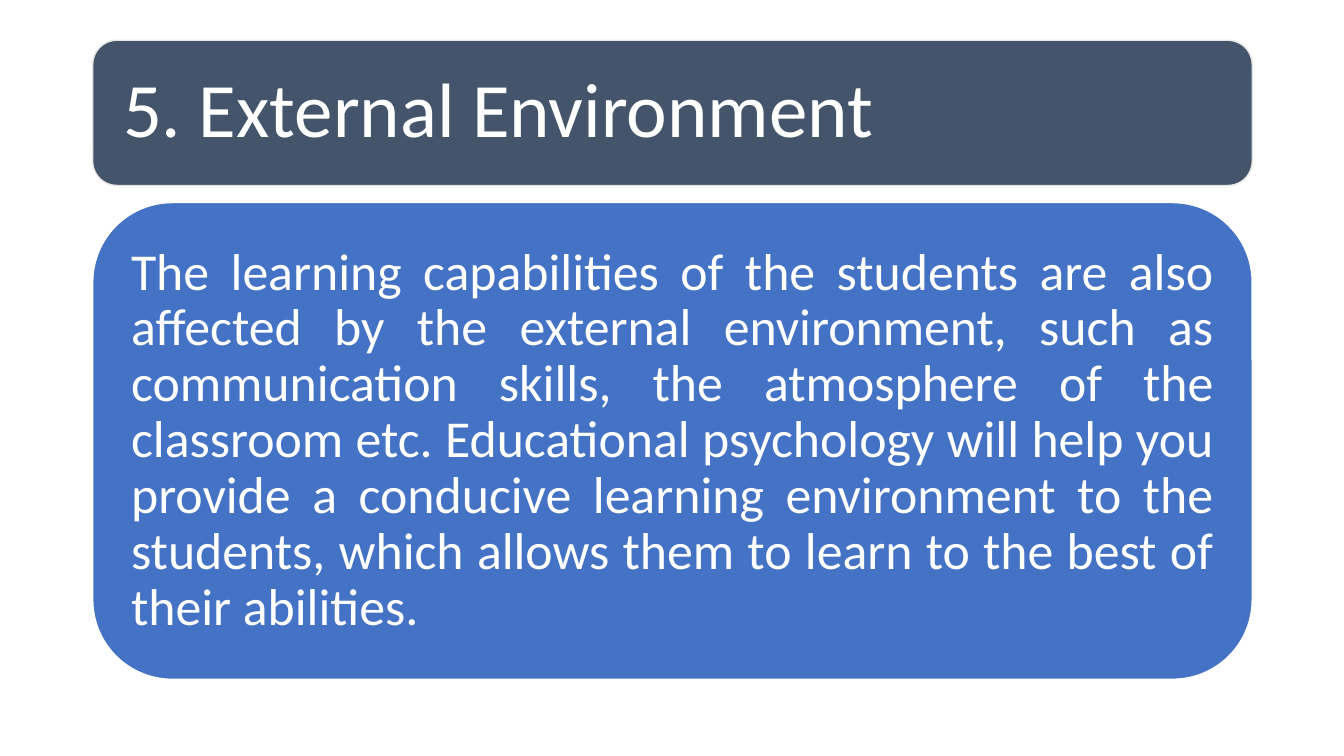
"""Build the External Environment slide with a title panel and a text panel."""
from dataclasses import dataclass

from lxml.etree import SubElement
from pptx import Presentation
from pptx.dml.color import RGBColor
from pptx.enum.shapes import MSO_SHAPE as Shape
from pptx.enum.text import MSO_ANCHOR as Anchor, MSO_AUTO_SIZE as AutoSize, PP_ALIGN as Align
from pptx.oxml.ns import qn
from pptx.shapes.placeholder import SlidePlaceholder
from pptx.slide import Slide
from pptx.util import Inches, Pt


@dataclass(frozen=True)
class Theme:
    font: str = "Calibri"
    text: str = "FFFFFF"
    title_fill: str = "44546A"
    title_line: str = "E7E6E6"
    body_fill: str = "4472C4"
    body_line: str = "FFFFFF"
    title_size: int = 55
    body_size: int = 37
    line_width: int = 1
    line_spacing: float = 0.9


@dataclass(frozen=True)
class Panel:
    placeholder_index: int
    top: float
    height: float
    padding: float
    inset: float
    fill: str
    line: str
    size: int
    align: Align
    text: str


THEME = Theme()
PANEL_LEFT, PANEL_WIDTH = 0.92, 11.5
PANELS = (
    Panel(0, 0.4, 1.44, 0.07, 0.23, THEME.title_fill, THEME.title_line,
          THEME.title_size, Align.LEFT, "5. External Environment"),
    Panel(1, 2.01, 4.73, 0.23, 0.15, THEME.body_fill, THEME.body_line,
          THEME.body_size, Align.JUSTIFY,
          "The learning capabilities of the students are also affected by the external "
          "environment, such as communication skills, the atmosphere of the classroom etc. "
          "Educational psychology will help you provide a conducive learning environment to "
          "the students, which allows them to learn to the best of their abilities."),
)


def format_text(placeholder: SlidePlaceholder, panel: Panel) -> None:
    """Place the placeholder inside its panel and format its text."""
    placeholder.left = Inches(PANEL_LEFT + panel.padding)
    placeholder.top = Inches(panel.top + panel.padding)
    placeholder.width = Inches(PANEL_WIDTH - 2 * panel.padding)
    placeholder.height = Inches(panel.height - 2 * panel.padding)
    frame = placeholder.text_frame
    frame.text = panel.text
    frame.word_wrap = True
    frame.auto_size = AutoSize.NONE
    frame.vertical_anchor = Anchor.MIDDLE
    frame.margin_left = frame.margin_right = Inches(panel.inset)
    frame.margin_top = frame.margin_bottom = Inches(panel.inset)
    paragraph = frame.paragraphs[0]
    paragraph.alignment = panel.align
    paragraph.line_spacing = THEME.line_spacing
    paragraph.space_before = Pt(0)
    paragraph.font.name = THEME.font
    paragraph.font.size = Pt(panel.size)
    paragraph.font.color.rgb = RGBColor.from_string(THEME.text)
    properties = paragraph._p.get_or_add_pPr()
    properties.set("marL", "0")
    properties.set("indent", "0")
    bullet = SubElement(properties, qn("a:buNone"))
    properties.find(qn("a:defRPr")).addprevious(bullet)


def add_panel(slide: Slide, panel: Panel) -> None:
    """Draw a rounded panel and bring its placeholder in front of it."""
    shape = slide.shapes.add_shape(
        Shape.ROUNDED_RECTANGLE, Inches(PANEL_LEFT), Inches(panel.top),
        Inches(PANEL_WIDTH), Inches(panel.height))
    shape.shadow.inherit = False
    shape.fill.solid()
    shape.fill.fore_color.rgb = RGBColor.from_string(panel.fill)
    shape.line.color.rgb = RGBColor.from_string(panel.line)
    shape.line.width = Pt(THEME.line_width)
    placeholder = slide.placeholders[panel.placeholder_index]
    format_text(placeholder, panel)
    shape._element.addnext(placeholder._element)


def main() -> None:
    """Create and save the presentation."""
    presentation = Presentation()
    presentation.slide_width = Inches(13.33)
    presentation.slide_height = Inches(7.5)
    slide = presentation.slides.add_slide(presentation.slide_layouts[1])
    for panel in PANELS:
        add_panel(slide, panel)
    presentation.save("out.pptx")


if __name__ == "__main__":
    main()
